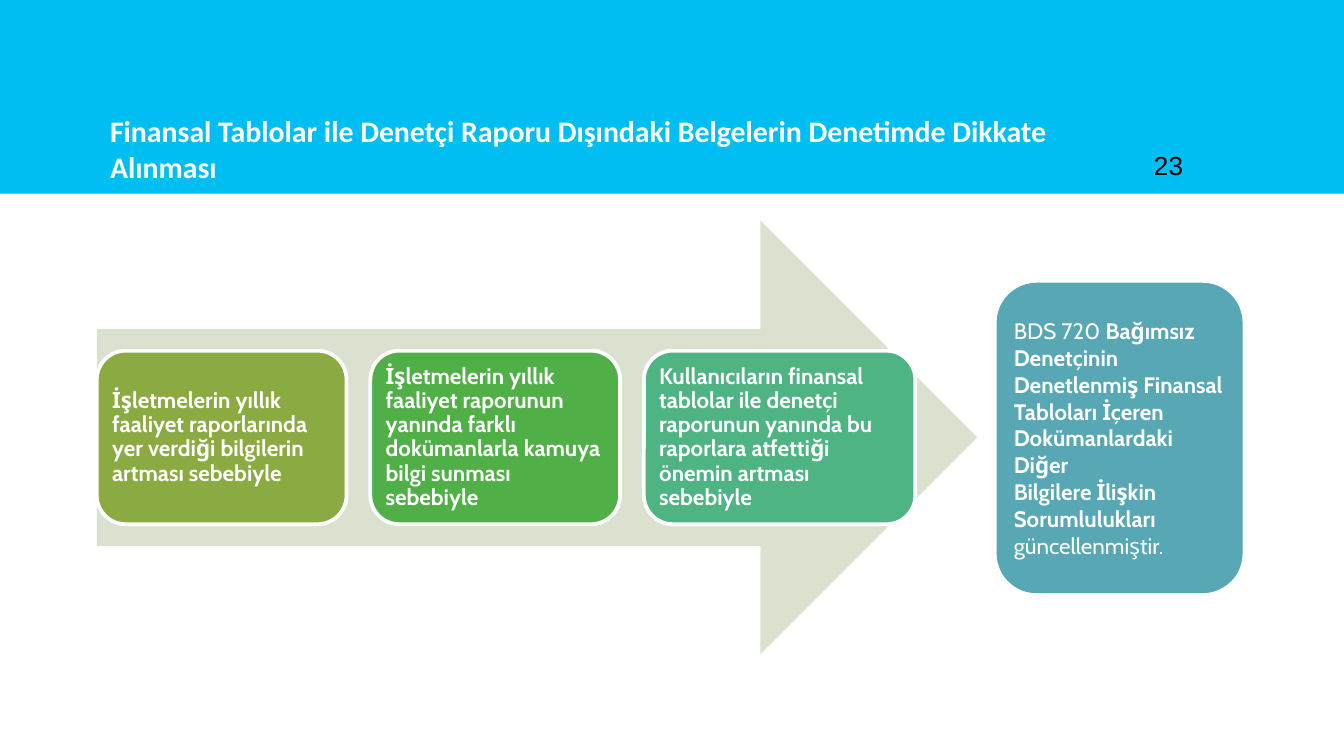
from pptx import Presentation
from pptx import util as u
from pptx.dml.color import RGBColor
from pptx.enum import shapes, text

WHITE = RGBColor(0xFF, 0xFF, 0xFF)
BLACK = RGBColor(0, 0, 0)
BAND = RGBColor(0x00, 0xBE, 0xF2)
ARROW = RGBColor(0xDA, 0xE2, 0xCF)
OLIVE = RGBColor(0x8B, 0xAB, 0x42)
GREEN = RGBColor(0x50, 0xB0, 0x47)
MINT = RGBColor(0x4E, 0xB4, 0x84)
TEAL = RGBColor(0x57, 0xA7, 0xB5)

TITLE = "Finansal Tablolar ile Denetçi Raporu Dışındaki Belgelerin Denetimde Dikkate Alınması"
REASONS = [
    (4.72, OLIVE, "İşletmelerin yıllık faaliyet raporlarında yer verdiği bilgilerin artması sebebiyle"),
    (4.72, GREEN, "İşletmelerin yıllık faaliyet raporunun yanında farklı dokümanlarla kamuya "
                  "bilgi sunması sebebiyle"),
    (5.13, MINT, "Kullanıcıların finansal tablolar ile denetçi raporunun yanında bu raporlara "
                 "atfettiği önemin artması sebebiyle"),
]
RESULT = [
    [("BDS 720 ", False),
     ("Bağımsız Denetçinin Denetlenmiş Finansal Tabloları İçeren Dokümanlardaki Diğer", True)],
    [("Bilgilere İlişkin Sorumlulukları", True)],
    [("güncellenmiştir.", False)],
]


def cm(*values):
    """Convert numbers to centimetre lengths."""
    return [u.Cm(v) for v in values]


def add_block(s, kind, box, fill, line=None):
    """Add a flat filled shape with an optional outline."""
    sp = s.shapes.add_shape(kind, *cm(*box))
    sp.shadow.inherit = False
    sp.fill.solid()
    sp.fill.fore_color.rgb = fill
    if line is None:
        sp.line.fill.background()
    else:
        sp.line.color.rgb = line
        sp.line.width = u.Pt(2)
    return sp


def set_frame(tf, anchor, inset, bottom=None):
    """Set wrapping, anchor and insets of a text frame."""
    tf.word_wrap = True
    tf.auto_size = text.MSO_AUTO_SIZE.NONE
    tf.vertical_anchor = anchor
    tf.margin_left = tf.margin_right = tf.margin_top = u.Cm(inset)
    tf.margin_bottom = u.Cm(inset if bottom is None else bottom)


def add_run(p, words, font, size, color, bold=False):
    """Add one formatted run to a paragraph."""
    r = p.add_run()
    r.text = words
    r.font.name = font
    r.font.size = u.Pt(size)
    r.font.bold = bold
    r.font.color.rgb = color


def add_card(s, box, fill, paragraphs, spacing):
    """Add a rounded card holding paragraphs of (words, bold) runs."""
    sp = add_block(s, shapes.MSO_SHAPE.ROUNDED_RECTANGLE, box, fill, WHITE)
    tf = sp.text_frame
    set_frame(tf, text.MSO_ANCHOR.MIDDLE, 0.13)
    for i, runs in enumerate(paragraphs):
        p = tf.add_paragraph() if i else tf.paragraphs[0]
        p.alignment = text.PP_ALIGN.LEFT
        p.line_spacing = spacing
        for words, bold in runs:
            add_run(p, words, "Cabin", 12, WHITE, bold)


def add_header(s, box):
    """Place the band, the title and the page number."""
    x, y, w, h = box
    band = add_block(s, shapes.MSO_SHAPE.RECTANGLE, box, BAND)
    band.element.getparent().insert(2, band.element)

    title = s.shapes.title
    title.left, title.top, title.width, title.height = cm(x + 1.83, y + 2.57, 19.81, 1.85)
    tf = title.text_frame
    set_frame(tf, text.MSO_ANCHOR.BOTTOM, 0.25, 0.94)
    p = tf.paragraphs[0]
    p.alignment = text.PP_ALIGN.LEFT
    p.line_spacing = 1.0
    add_run(p, TITLE, "Calibri", 16, WHITE, True)

    number = s.shapes.add_textbox(*cm(x + 21.56, y + h - 1.85, 1.52, 1.85))
    set_frame(number.text_frame, text.MSO_ANCHOR.BOTTOM, 0.25)
    add_run(number.text_frame.paragraphs[0], "23", "Arial", 14, BLACK)


def add_reasons(s, box, gap=0.45, height=3.28):
    """Place the arrow with a row of reason cards centred on it."""
    x, y, w, h = box
    add_block(s, shapes.MSO_SHAPE.RIGHT_ARROW, box, ARROW)
    top = y + (h - height) / 2
    for width, fill, words in REASONS:
        add_card(s, (x, top, width, height), fill, [[(words, True)]], 0.9)
        x += width + gap


def main():
    """Build and save the slide."""
    prs = Presentation()
    prs.slide_width, prs.slide_height = cm(25.4, 14.29)
    s = prs.slides.add_slide(prs.slide_layouts[5])
    add_header(s, (0, 0, 25.4, 3.66))
    add_reasons(s, (1.83, 4.17, 16.64, 8.2))
    add_card(s, (18.8, 5.31, 4.72, 5.94), TEAL, RESULT, 1.0)
    prs.save("out.pptx")


if __name__ == "__main__":
    main()
